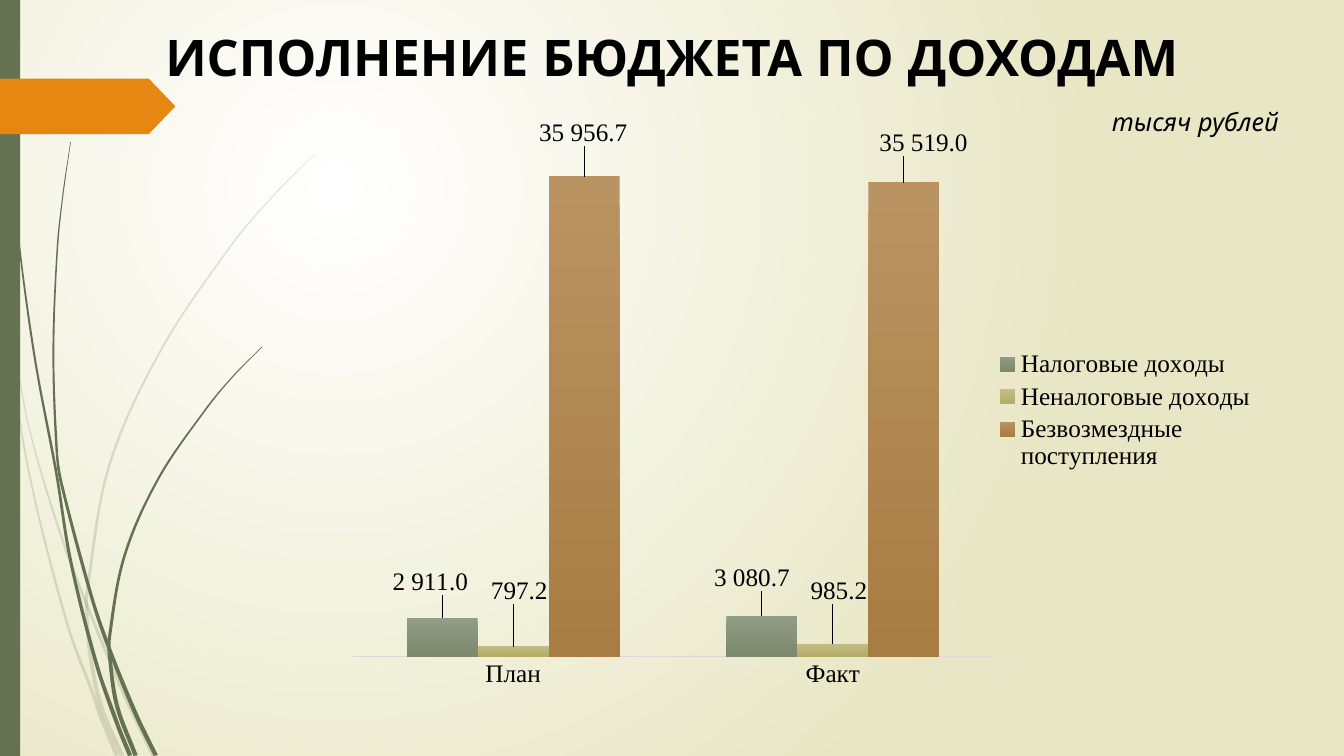
from math import hypot

from lxml import etree
from pptx import Presentation
from pptx.chart.data import CategoryChartData
from pptx.dml.color import RGBColor
from pptx.enum.chart import (XL_CHART_TYPE, XL_LABEL_POSITION,
                             XL_LEGEND_POSITION, XL_TICK_MARK)
from pptx.enum.shapes import MSO_SHAPE
from pptx.enum.text import MSO_ANCHOR, MSO_AUTO_SIZE, PP_ALIGN
from pptx.oxml import parse_xml
from pptx.oxml.ns import nsdecls, qn
from pptx.util import Inches, Pt

COLUMN = XL_CHART_TYPE.COLUMN_CLUSTERED
OUT_END = XL_LABEL_POSITION.OUTSIDE_END
RIGHT = XL_LEGEND_POSITION.RIGHT
NO_TICK = XL_TICK_MARK.NONE
RECT, ARROW = MSO_SHAPE.RECTANGLE, MSO_SHAPE.PENTAGON
MIDDLE, CENTER = MSO_ANCHOR.MIDDLE, PP_ALIGN.CENTER
GROW = MSO_AUTO_SIZE.SHAPE_TO_FIT_TEXT

COLORS = {"ink": "000000", "leaf": "647252", "flag": "E78712",
          "glow": "FFFFFF", "sand": "E8E6C4", "axis": "D9D9D9"}
HEAD, BODY = "Quicksand", "Times New Roman"
FORMAT = r"#\ ##0.0"
COLS, ROWS = 133.3, 75  # grid cells of a tenth of an inch

# Grass blades: knots where a blade is cut, then its spine from tip to root
PALE = [
    ((1, 5), [(.4, 29), (1, 34.7), (2.9, 47), (6.7, 62), (9.2, 68.8),
              (10.1, 71.4), (11.6, 75)]),
    ((3,), [(1.5, 35), (2.9, 42.5), (5.7, 52.1), (8.4, 59.5), (12.5, 69.3),
            (15.2, 75)]),
    ((5, 6, 8), [(31.2, 15.3), (26.8, 19.75), (22.85, 24.45), (15.9, 34.85),
                 (10.85, 46.15), (8.65, 58.6), (8.6, 60.5), (8.9, 64.6),
                 (10, 70), (12.1, 75)]),
]
DARK = [
    ((4, 7), [(.35, 0), (.75, 11), (1.8, 23.3), (3.45, 35.5), (5.6, 47),
              (7, 55.6), (9.55, 65.8), (11.7, 72), (12.9, 75)]),
    ((4, 5, 7), [(7, 14.1), (6.25, 19.3), (5.7, 24.5), (5.3, 34.9), (5.65, 45),
                 (6.1, 48), (9.05, 59.1), (10.7, 64), (13.4, 70.7), (15.45, 75)]),
    ((5, 6, 7), [(26, 34.4), (23.1, 37.35), (20.45, 40.55), (15.7, 47.5),
                 (12.35, 55.15), (10.85, 63.3), (10.9, 65.3), (11.6, 70),
                 (13.45, 75)]),
]

# Name, values, gradient, label shifts in percent of the chart
CATS = ["План", "Факт"]
SERIES = [
    ("Налоговые доходы", (2911, 3080.7), ("919D86", "7B896D"),
     ((-1.2, -2.9), (-1, -3.2))),
    ("Неналоговые доходы", (797.2, 985.2), ("C3BC85", "B3AC66"),
     ((.3, -6), (.3, -5.7))),
    ("Безвозмездные поступления", (35956.7, 35519), ("BA9362", "A77D43"),
     ((-.1, -4.2), (2, -3.5))),
]


def rgb(name):
    return RGBColor.from_string(COLORS.get(name, name))


def slopes(line):
    """Unit direction of the line at each knot."""
    out = []
    for (x0, y0), (x1, y1) in zip(line[:1] + line, line[1:] + line[-1:]):
        size = hypot(x1 - x0, y1 - y0)
        out.append(((x1 - x0) / size, (y1 - y0) / size))
    return out


def layout(x, y, w=None, h=None, inner=False):
    """A manual chart layout in percent; without a size it is a shift."""
    parts = [("layoutTarget", "inner")] if inner else []
    if w:
        parts += [("xMode", "edge"), ("yMode", "edge")]
    parts += [("x", x / 100), ("y", y / 100)]
    if w:
        parts += [("w", w / 100), ("h", h / 100)]
    body = "".join(f'<c:{tag} val="{val}"/>' for tag, val in parts)
    return parse_xml(f'<c:layout {nsdecls("c")}><c:manualLayout>{body}'
                     "</c:manualLayout></c:layout>")


def place(host, after, box):
    """Put a layout into a chart part, behind the tag named after."""
    for old in host.findall(qn("c:layout")):
        host.remove(old)
    mark = host.find(qn(after)) if after else None
    host.insert(0 if mark is None else host.index(mark) + 1, box)


class Deck:
    def __init__(self):
        self.prs = Presentation()
        self.prs.slide_width, self.prs.slide_height = self.cell(COLS, ROWS)
        self.slide = self.prs.slides.add_slide(self.prs.slide_layouts[6])
        self.shapes = self.slide.shapes

    def cell(self, *nums):
        return [Inches(n / 10) for n in nums]

    def blend(self, fill, pair):
        fill.gradient()
        for stop, name, pos in zip(fill.gradient_stops, pair, (0, 1)):
            stop.color.rgb, stop.position = rgb(name), pos

    def back(self, pair):
        self.blend(self.slide.background.fill, pair)
        grad = self.slide._element.find(".//" + qn("a:gradFill"))
        grad.remove(grad.find(qn("a:lin")))
        ring = etree.SubElement(grad, qn("a:path"))
        ring.set("path", "circle")
        rect = etree.SubElement(ring, qn("a:fillToRect"))
        for side, val in zip("ltrb", (50, 50, 100, 100)):
            rect.set(side, str(val * 1000))

    def paint(self, shape, color, alpha=100):
        shape.shadow.inherit = False
        shape.fill.solid()
        shape.fill.fore_color.rgb = rgb(color)
        shape.line.fill.background()
        if alpha < 100:
            tone = shape._element.spPr.find(".//" + qn("a:srgbClr"))
            etree.SubElement(tone, qn("a:alpha")).set("val", str(alpha * 1000))

    def block(self, kind, box, color):
        shape = self.shapes.add_shape(kind, *self.cell(*box))
        self.paint(shape, color)
        return shape

    def blade(self, cuts, knots, alpha):
        left, right = [], []
        dirs = slopes(knots)
        for i, ((x, y), (dx, dy)) in enumerate(zip(knots, dirs)):
            half = .03 + .22 * i / len(knots)
            left.append((x + dy * half, min(y - dx * half, ROWS)))
            right.append((x - dy * half, min(y + dx * half, ROWS)))
        for a, b in zip((0, *cuts), (*cuts, len(knots) - 1)):
            part = slice(a, b + 1)
            self.leaf(left[part], right[part], dirs[part], alpha)

    def leaf(self, left, right, dirs, alpha):
        edge = left + right[::-1]
        ways = dirs + [(-dx, -dy) for dx, dy in dirs[::-1]]
        form = self.shapes.build_freeform(*self.cell(*edge[0]))
        form.add_line_segments([self.cell(*spot) for spot in edge[1:]], close=True)
        shape = form.convert_to_shape()
        # Bend both long sides
        lines = list(shape._element.iter(qn("a:lnTo")))
        for i, node in enumerate(lines[:len(edge) - 1]):
            if i == len(left) - 1:
                continue
            (x0, y0), (x1, y1) = edge[i:i + 2]
            (u0, v0), (u1, v1) = ways[i:i + 2]
            arm = hypot(x1 - x0, y1 - y0) / 3
            node.tag = qn("a:cubicBezTo")
            for j, (x, y) in enumerate(((x0 + u0 * arm, y0 + v0 * arm),
                                        (x1 - u1 * arm, y1 - v1 * arm))):
                x, y = self.cell(x, y)
                spot = etree.Element(qn("a:pt"))
                spot.set("x", str(x - shape.left))
                spot.set("y", str(y - shape.top))
                node.insert(j, spot)
        self.paint(shape, "leaf", alpha)

    def font(self, font, face, size=18):
        font.name, font.size = face, Pt(size)
        font.color.rgb = rgb("ink")
        return font

    def text(self, box, words, size, bold=False, italic=False, wrap=True):
        frame = self.shapes.add_textbox(*self.cell(*box)).text_frame
        frame.word_wrap = wrap
        run = frame.paragraphs[0].add_run()
        run.text = words
        font = self.font(run.font, HEAD, size)
        font.bold, font.italic = bold, italic
        return frame

    def label(self, series, shifts):
        tags = series.data_labels
        tags.show_value = True
        tags.number_format, tags.number_format_is_linked = FORMAT, False
        for tag in [tags] + [series.points[i].data_label for i in range(len(shifts))]:
            self.font(tag.font, BODY)
            tag.position = OUT_END
        for node, shift in zip(series._element.iter(qn("c:dLbl")), shifts):
            place(node, "c:idx", layout(*shift))
            form = parse_xml(f'<c:numFmt {nsdecls("c")} sourceLinked="0"/>')
            form.set("formatCode", FORMAT)
            node.insert(2, form)
        # No leader lines
        series._element.find(qn("c:dLbls")).append(parse_xml(
            f'<c:extLst {nsdecls("c")}><c:ext '
            'uri="{CE6537A1-D6FC-4f65-9D91-7224C49458BB}" xmlns:c15='
            '"http://schemas.microsoft.com/office/drawing/2012/chart">'
            '<c15:showLeaderLines val="0"/></c:ext></c:extLst>'))

    def chart(self, box):
        data = CategoryChartData(number_format=FORMAT)
        data.categories = CATS
        for name, vals, *_ in SERIES:
            data.add_series(name, vals)
        chart = self.shapes.add_chart(COLUMN, *self.cell(*box), data).chart
        self.font(chart.font, BODY)
        chart.has_title = False
        # Axes
        axis, scale = chart.category_axis, chart.value_axis
        axis.major_tick_mark = NO_TICK
        axis.format.line.color.rgb = rgb("axis")
        axis.format.line.width = Pt(1)
        self.font(axis.tick_labels.font, BODY)
        scale.minimum_scale, scale.maximum_scale = 0, 40000
        scale.has_major_gridlines = scale.visible = False
        # Columns
        plot = chart.plots[0]
        plot.gap_width, plot.overlap, plot.vary_by_categories = 150, 0, False
        for series, (_, _, pair, shifts) in zip(plot.series, SERIES):
            self.blend(series.format.fill, pair)
            series.format.fill.gradient_angle = 270
            self.label(series, shifts)
        # Legend and plot area
        chart.has_legend = True
        legend = chart.legend
        legend.position, legend.include_in_layout = RIGHT, False
        self.font(legend.font, BODY)
        place(legend._element, "c:legendPos", layout(72.1, 39.2, 27, 21))
        area = chart._chartSpace.find(".//" + qn("c:plotArea"))
        place(area, None, layout(7.5, 3.3, 64.7, 86.1, inner=True))


def main():
    deck = Deck()
    # Backdrop
    deck.back(("glow", "sand"))
    for group, alpha in ((PALE, 20), (DARK, 100)):
        for cuts, knots in group:
            deck.blade(cuts, knots, alpha)
    deck.block(RECT, (0, 0, 2, ROWS), "leaf")
    flag = deck.block(ARROW, (0, 7.8, 17.4, 5.5), "flag")
    flag.adjustments[0] = .48
    # Headings
    title = deck.text((0, 1, COLS, 9.1), "ИСПОЛНЕНИЕ БЮДЖЕТА ПО ДОХОДАМ", 36, bold=True)
    title.vertical_anchor = MIDDLE
    title.paragraphs[0].alignment = CENTER
    unit = deck.text((109.3, 10.1, 18.8, 4), "тысяч рублей", 18, italic=True, wrap=False)
    unit.auto_size = GROW
    # Income chart
    deck.chart((27.7, 10.1, 98, 61.6))
    deck.prs.save("out.pptx")


if __name__ == "__main__":
    main()
